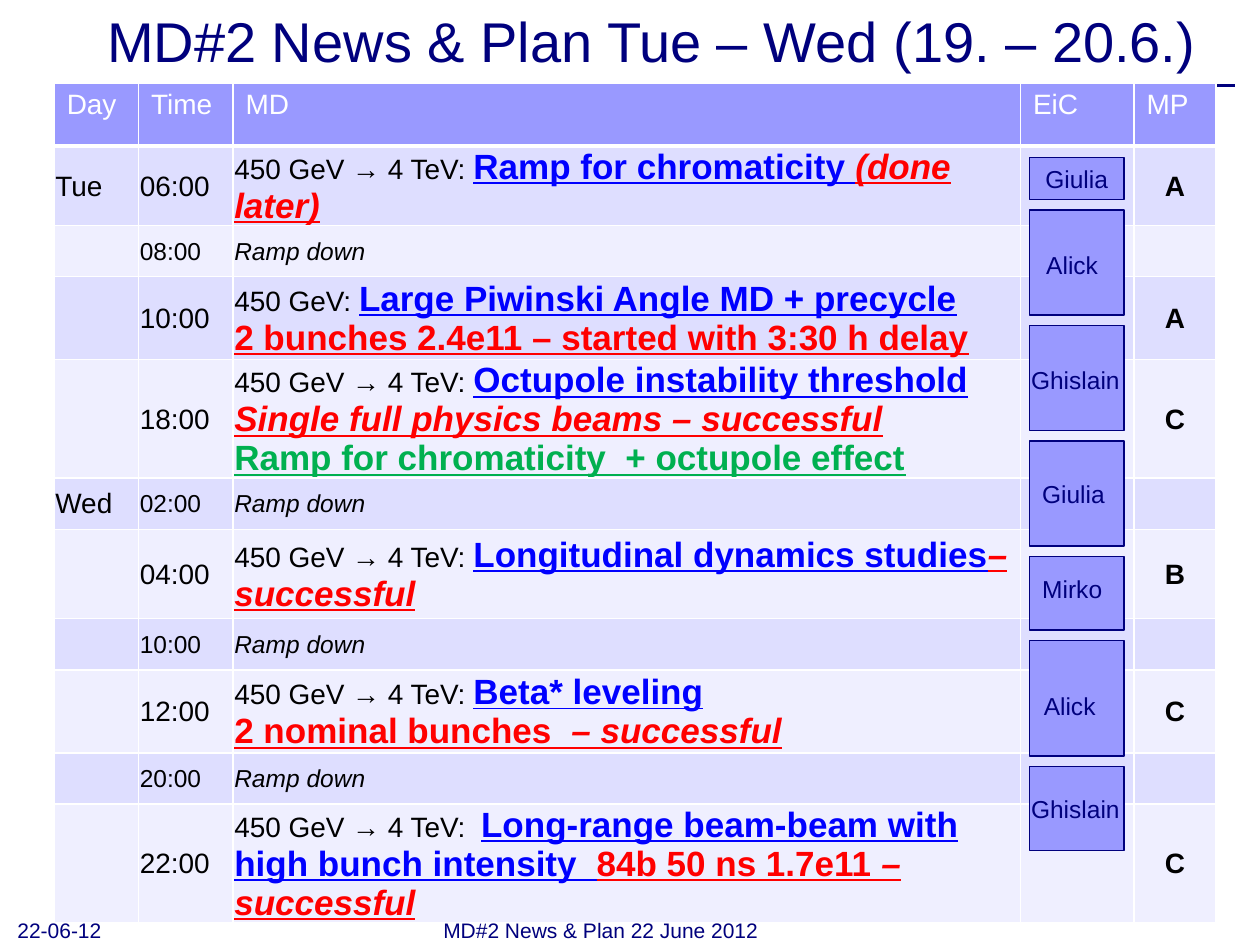
from lxml import etree
from pptx import Presentation
from pptx.dml.color import RGBColor
from pptx.enum.shapes import MSO_CONNECTOR, MSO_SHAPE
from pptx.enum.text import MSO_ANCHOR, PP_ALIGN
from pptx.oxml.ns import qn
from pptx.util import Inches, Pt

STRAIGHT, RECTANGLE = MSO_CONNECTOR.STRAIGHT, MSO_SHAPE.RECTANGLE
MIDDLE, BOTTOM = MSO_ANCHOR.MIDDLE, MSO_ANCHOR.BOTTOM
LEFT, CENTER = PP_ALIGN.LEFT, PP_ALIGN.CENTER

NAVY = RGBColor(0x00, 0x00, 0x7D)
LAVENDER = RGBColor(0x99, 0x99, 0xFF)
BAND_DARK = RGBColor(0xDE, 0xDE, 0xFF)
BAND_LIGHT = RGBColor(0xEF, 0xEF, 0xFF)
WHITE = RGBColor(0xFF, 0xFF, 0xFF)
BLACK = RGBColor(0x00, 0x00, 0x00)
BLUE = RGBColor(0x00, 0x00, 0xFF)
RED = RGBColor(0xFF, 0x00, 0x00)
GREEN = RGBColor(0x00, 0xB0, 0x50)
FONT = "Arial"

# Each style is size, colour, bold, italic, underline.
HEADER = (16, WHITE, False, False, False)
PLAIN = (16, BLACK, False, False, False)
SMALL = (14, BLACK, False, False, False)
NOTE = (14, BLACK, False, True, False)
MARK = (16, BLACK, True, False, False)
STUDY = (20, BLUE, True, False, True)
RESULT = (20, RED, True, False, True)
STATUS = (20, RED, True, True, True)
EXTRA = (20, GREEN, True, False, True)

COLUMN_WIDTHS = (0.67, 0.75, 6.25, 0.9, 0.65)
HEADINGS = ("Day", "Time", "MD", "EiC", "MP")
HEADER_HEIGHT = 0.5
RAMP = "450 GeV → 4 TeV: "
RAMP_DOWN = [[("Ramp down", NOTE)]]
SCHEDULE = [
    (0.63, "Tue", "06:00", [[(RAMP, PLAIN), ("Ramp for chromaticity ", STUDY),
                             ("(done later)", STATUS)]], "A"),
    (0.39, "", "08:00", RAMP_DOWN, ""),
    (0.66, "", "10:00", [[("450 GeV: ", PLAIN), ("Large Piwinski Angle MD + precycle", STUDY)],
                         [("2 bunches 2.4e11 – started with 3:30 h delay", RESULT)]], "A"),
    (0.77, "", "18:00", [[(RAMP, PLAIN), ("Octupole instability threshold", STUDY)],
                         [("Single full physics beams – successful", STATUS)],
                         [("Ramp for chromaticity  + octupole effect", EXTRA)]], "C"),
    (0.38, "Wed", "02:00", RAMP_DOWN, ""),
    (0.71, "", "04:00", [[(RAMP, PLAIN), ("Longitudinal dynamics studies", STUDY),
                          ("– successful", STATUS)]], "B"),
    (0.38, "", "10:00", RAMP_DOWN, ""),
    (0.66, "", "12:00", [[(RAMP, PLAIN), ("Beta* leveling", STUDY)],
                         [("2 nominal bunches  ", RESULT), ("– successful", STATUS)]], "C"),
    (0.38, "", "20:00", RAMP_DOWN, ""),
    (0.77, "", "22:00", [[(RAMP + " ", PLAIN),
                          ("Long-range beam-beam with high bunch intensity  ", STUDY),
                          ("84b 50 ns 1.7e11 ", RESULT), ("– successful", STATUS)]], "C"),
]

# Each shift is name, length in twelfths of an inch, label left, top and width.
SHIFTS = [
    ("Giulia", 4, 8.17, 1.25, 0.75),
    ("Alick", 10, 8.03, 1.93, 0.96),
    ("Ghislain", 10, 8.08, 2.84, 0.91),
    ("Giulia", 10, 8.17, 3.75, 0.7),
    ("Mirko", 7, 8.17, 4.5, 0.68),
    ("Alick", 11, 8.17, 5.43, 0.64),
    ("Ghislain", 8, 8.08, 6.25, 0.91),
]


def style_font(font, style):
    """Apply a text style to a font."""
    size, colour, font.bold, font.italic, font.underline = style
    font.name, font.size = FONT, Pt(size)
    font.color.rgb = colour


def add_title(slide, left, top, width, height):
    """Place the title and the rule below it."""
    title = slide.shapes.title
    title.left, title.top, title.width, title.height = map(Inches, (left, top, width, height))
    frame = title.text_frame
    frame.text = "MD#2 News & Plan Tue – Wed (19. – 20.6.)"
    frame.vertical_anchor = MIDDLE
    frame.paragraphs[0].alignment = LEFT
    style_font(frame.paragraphs[0].font, (32, NAVY, False, False, False))
    rule_top = Inches(top + height + 0.08)
    rule = slide.shapes.add_connector(STRAIGHT, Inches(left), rule_top, Inches(9.8), rule_top)
    rule.line.color.rgb = NAVY
    rule.line.width = Pt(2)
    etree.SubElement(rule.element.spPr, qn("a:effectLst"))


def paint_cell(cell, colour, bottom_width=1):
    """Give a cell white borders and a fill."""
    properties = cell._tc.get_or_add_tcPr()
    for side, width in (("L", 1), ("R", 1), ("T", 1), ("B", bottom_width)):
        border = etree.SubElement(properties, qn("a:ln" + side), w=str(Pt(width)))
        fill = etree.SubElement(border, qn("a:solidFill"))
        etree.SubElement(fill, qn("a:srgbClr"), val=str(WHITE))
    cell.fill.solid()
    cell.fill.fore_color.rgb = colour


def fill_cell(cell, paragraphs, alignment=LEFT):
    """Write styled runs into a tightly set cell."""
    cell.vertical_anchor = MIDDLE
    cell.margin_left = cell.margin_top = cell.margin_right = Inches(0.01)
    cell.margin_bottom = 0
    frame = cell.text_frame
    for index, runs in enumerate(paragraphs):
        paragraph = frame.add_paragraph() if index else frame.paragraphs[0]
        paragraph.alignment = alignment
        for text, style in runs:
            run = paragraph.add_run()
            run.text = text
            style_font(run.font, style)


def add_schedule(slide, left, top):
    """Build the schedule table."""
    heights = [HEADER_HEIGHT] + [row[0] for row in SCHEDULE]
    table = slide.shapes.add_table(
        len(heights), len(COLUMN_WIDTHS), Inches(left), Inches(top),
        Inches(sum(COLUMN_WIDTHS)), Inches(sum(heights))).table
    for column, width in zip(table.columns, COLUMN_WIDTHS):
        column.width = Inches(width)
    for row, height in zip(table.rows, heights):
        row.height = Inches(height)
    for cell, heading in zip(table.rows[0].cells, HEADINGS):
        paint_cell(cell, LAVENDER, 3)
        cell.text = heading
        style_font(cell.text_frame.paragraphs[0].font, HEADER)
    for index, (_, day, time, study, mark) in enumerate(SCHEDULE, 1):
        cells = list(table.rows[index].cells)
        for cell in cells:
            paint_cell(cell, BAND_DARK if index % 2 else BAND_LIGHT)
        if day:
            fill_cell(cells[0], [[(day, PLAIN)]])
        fill_cell(cells[1], [[(time, SMALL if study is RAMP_DOWN else PLAIN)]])
        fill_cell(cells[2], study)
        if mark:
            fill_cell(cells[4], [[(mark, MARK)]], CENTER)


def add_label(slide, text, box, size, alignment=LEFT, anchor=BOTTOM):
    """Add one line of navy text in a box."""
    frame = slide.shapes.add_textbox(*map(Inches, box)).text_frame
    frame.text = text
    frame.word_wrap = alignment == LEFT
    frame.vertical_anchor = anchor
    frame.paragraphs[0].alignment = alignment
    style_font(frame.paragraphs[0].font, (size, NAVY, False, False, False))


def add_shifts(slide, left, top, width):
    """Stack the shift blocks with equal gaps and label them."""
    for name, length, label_left, label_top, label_width in SHIFTS:
        block = slide.shapes.add_shape(
            RECTANGLE, Inches(left), Inches(top), Inches(width), Inches(length / 12))
        block.shadow.inherit = False
        block.fill.solid()
        block.fill.fore_color.rgb = LAVENDER
        block.line.color.rgb = NAVY
        block.line.width = Pt(1)
        add_label(slide, name, (label_left, label_top, label_width, 0.34), 14, CENTER, MIDDLE)
        top += (length + 1) / 12


def main():
    """Build and save the slide."""
    presentation = Presentation()
    presentation.slide_width, presentation.slide_height = Inches(10), Inches(7.5)
    slide = presentation.slides.add_slide(presentation.slide_layouts[5])
    add_title(slide, 0.75, 0.03, 9, 0.57)
    add_schedule(slide, 0.43, 0.66)
    add_shifts(slide, 8.17, 1.25, 0.75)
    add_label(slide, "MD#2 News & Plan 22 June 2012", (3.42, 7.25, 3.17, 0.28), 12)
    add_label(slide, "22-06-12", (0.04, 7.24, 2.33, 0.29), 12)
    presentation.save("out.pptx")


if __name__ == "__main__":
    main()
